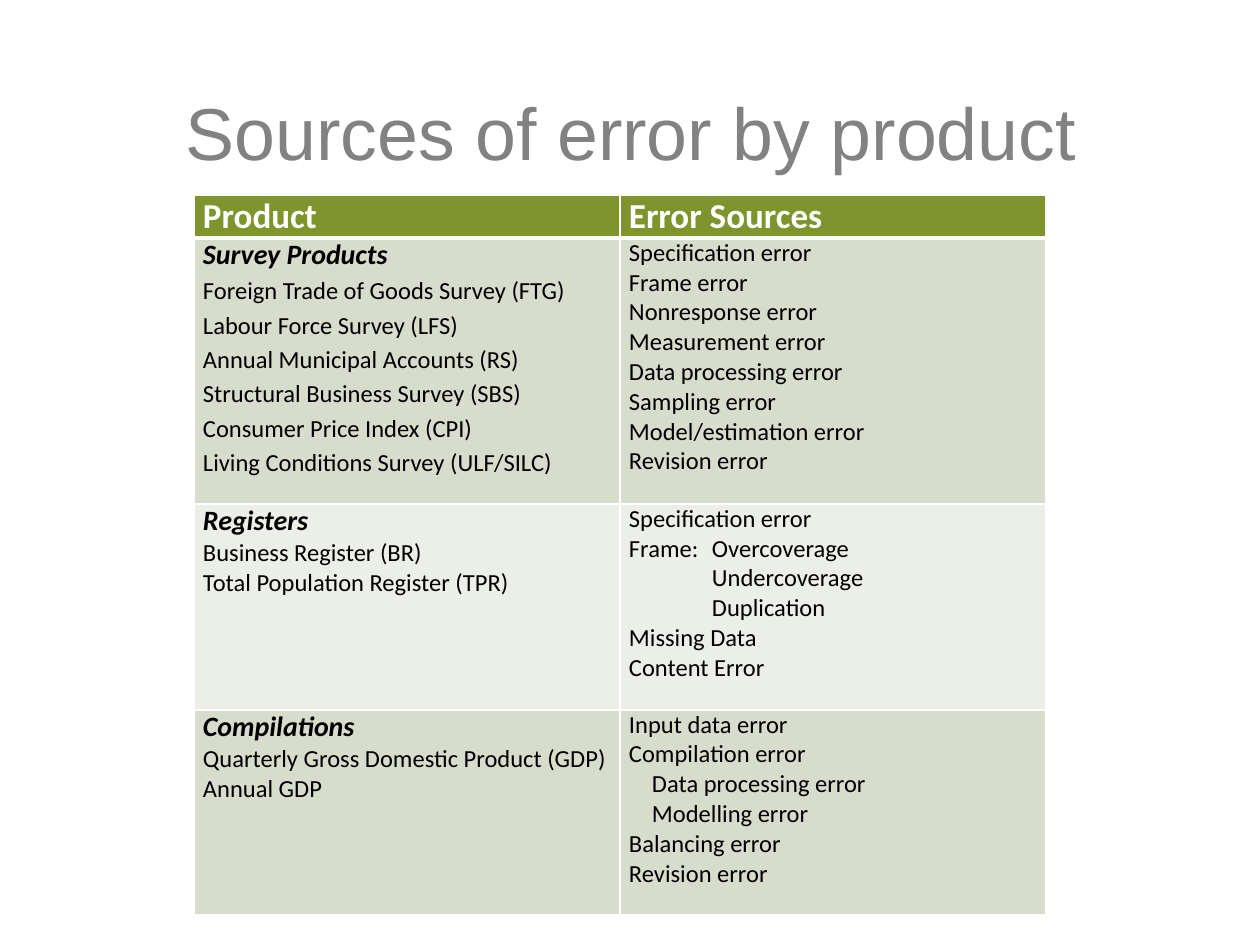
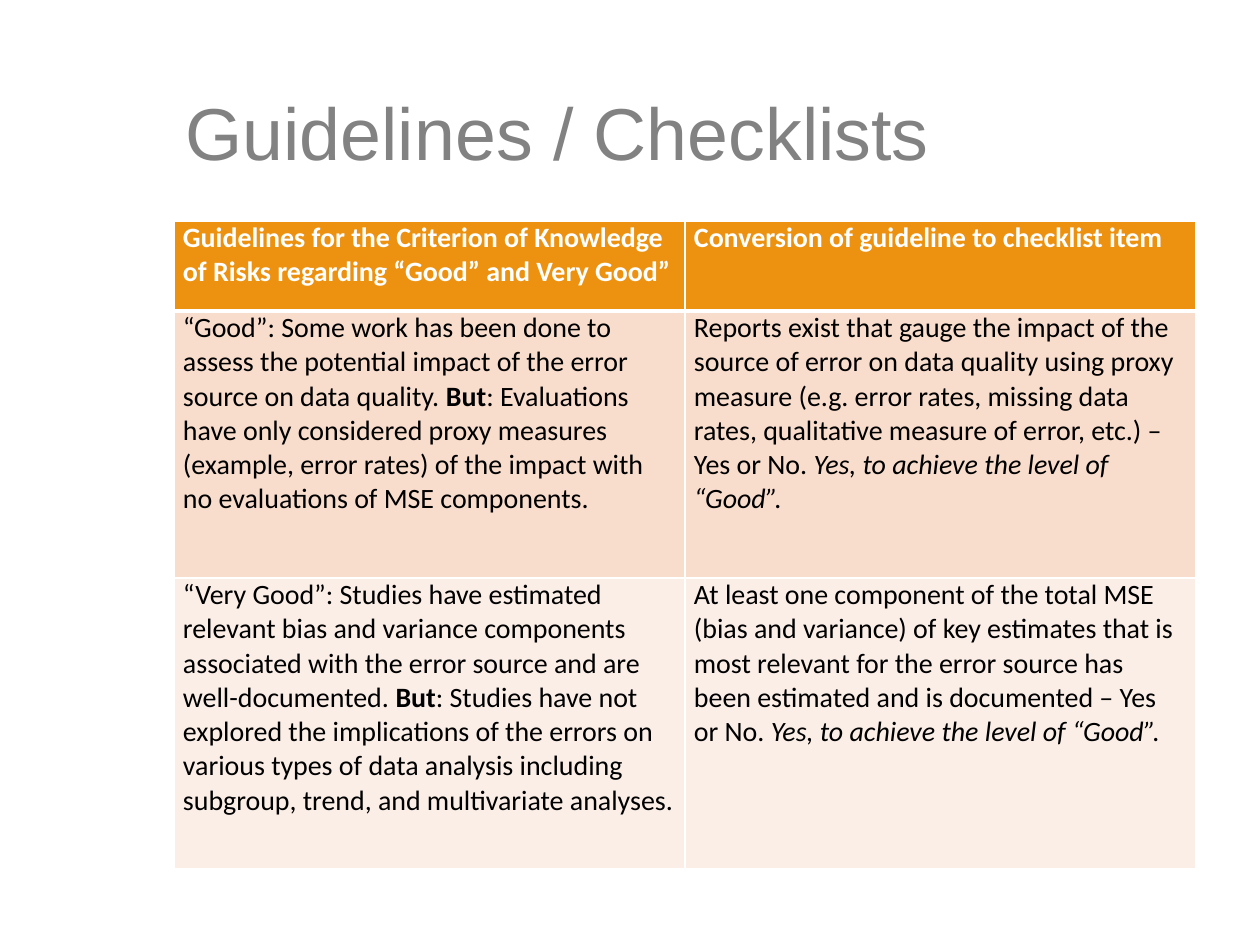
from dataclasses import dataclass

from lxml import etree
from pptx import Presentation
from pptx import util as u
from pptx.dml.color import RGBColor
from pptx.enum import text
from pptx.oxml import ns

PX_PER_INCH = 126
SLIDE_WIDTH, SLIDE_HEIGHT = 1260, 945
TITLE_BOX = (173, 52, 1024, 158)
CELL_MARGIN = 9
COVERAGE_INDENT = 83
COMPILATION_INDENT = 23

TITLE_FONT = "Arial"
TABLE_FONT = "Calibri"

WHITE = RGBColor(0xFF, 0xFF, 0xFF)
BLACK = RGBColor(0x00, 0x00, 0x00)
TITLE_GREY = RGBColor(0x82, 0x82, 0x82)
GREEN = RGBColor(0x7F, 0x94, 0x2C)
GREEN_BAND = RGBColor(0xD8, 0xDC, 0xCD)
GREEN_PALE = RGBColor(0xEC, 0xEE, 0xE8)
ORANGE = RGBColor(0xEC, 0x92, 0x10)
ORANGE_BAND = RGBColor(0xF8, 0xDC, 0xCC)
ORANGE_PALE = RGBColor(0xFB, 0xEE, 0xE7)


@dataclass(frozen=True)
class Span:
    text: str
    bold: bool = False
    italic: bool = False


@dataclass(frozen=True)
class Line:
    spans: tuple[Span, ...]
    size: int
    indent: int = 0
    tab: int = 0
    spacing: float = 1.0


Cell = list[Line]


@dataclass(frozen=True)
class TableSlide:
    title: str
    left: int
    top: int
    column_width: int
    row_heights: tuple[int, ...]
    header_fill: RGBColor
    band_fills: tuple[RGBColor, RGBColor]
    rows: list[list[Cell]]


def px(length: int) -> u.Emu:
    return u.Emu(round(length * u.Inches(1) / PX_PER_INCH))


def header(labels: list[str], size: int) -> list[Cell]:
    return [[Line((Span(label, bold=True),), size)] for label in labels]


def item(label: str, indent: int = 0, tab: int = 0, spacing: float = 1.0) -> Line:
    return Line((Span(label),), 14, indent, tab, spacing)


def product_group(name: str, products: list[str], spacing: float = 1.0) -> Cell:
    heading = Line((Span(name, bold=True, italic=True),), 16)
    return [heading] + [item(product, spacing=spacing) for product in products]


def prose(*spans: Span) -> Cell:
    return [Line(spans, 16)]


ACHIEVED = Span("Yes, to achieve the level of “Good”.", italic=True)
BUT = Span("But", bold=True)

ERROR_SOURCES = TableSlide(
    title="Sources of error by product",
    left=194,
    top=195,
    column_width=426,
    row_heights=(42, 266, 206, 205),
    header_fill=GREEN,
    band_fills=(GREEN_BAND, GREEN_PALE),
    rows=[
        header(["Product", "Error Sources"], 20),
        [
            product_group("Survey Products", [
                "Foreign Trade of Goods Survey (FTG)",
                "Labour Force Survey (LFS)",
                "Annual Municipal Accounts (RS)",
                "Structural Business Survey (SBS)",
                "Consumer Price Index (CPI)",
                "Living Conditions Survey (ULF/SILC)",
            ], spacing=1.15),
            [item(label) for label in (
                "Specification error",
                "Frame error",
                "Nonresponse error",
                "Measurement error",
                "Data processing error",
                "Sampling error",
                "Model/estimation error",
                "Revision error",
            )],
        ],
        [
            product_group("Registers", [
                "Business Register (BR)",
                "Total Population Register (TPR)",
            ]),
            [
                item("Specification error"),
                item("Frame:\tOvercoverage", tab=COVERAGE_INDENT),
                item("Undercoverage", COVERAGE_INDENT),
                item("Duplication", COVERAGE_INDENT),
                item("Missing Data"),
                item("Content Error"),
            ],
        ],
        [
            product_group("Compilations", [
                "Quarterly Gross Domestic Product (GDP)",
                "Annual GDP",
            ]),
            [
                item("Input data error"),
                item("Compilation error"),
                item("Data processing error", COMPILATION_INDENT),
                item("Modelling error", COMPILATION_INDENT),
                item("Balancing error"),
                item("Revision error"),
            ],
        ],
    ],
)

GUIDELINES = TableSlide(
    title="Guidelines / Checklists",
    left=174,
    top=221,
    column_width=511,
    row_heights=(90, 267, 291),
    header_fill=ORANGE,
    band_fills=(ORANGE_BAND, ORANGE_PALE),
    rows=[
        header([
            "Guidelines for the Criterion of Knowledge of Risks regarding “Good” and Very Good”",
            "Conversion of guideline to checklist item",
        ], 16),
        [
            prose(
                Span("“Good”: Some work has been done to assess the potential impact of "
                     "the error source on data quality. "),
                BUT,
                Span(": Evaluations have only considered proxy measures (example, error "
                     "rates) of the impact with no evaluations of MSE components."),
            ),
            prose(
                Span("Reports exist that gauge the impact of the source of error on data "
                     "quality using proxy measure (e.g. error rates, missing data rates, "
                     "qualitative measure of error, etc.) – Yes or No. "),
                ACHIEVED,
            ),
        ],
        [
            prose(
                Span("“Very Good”: Studies have estimated relevant bias and variance "
                     "components associated with the error source and are well-documented. "),
                BUT,
                Span(": Studies have not explored the implications of the errors on various "
                     "types of data analysis including subgroup, trend, and multivariate "
                     "analyses."),
            ),
            prose(
                Span("At least one component of the total MSE (bias and variance) of key "
                     "estimates that is most relevant for the error source has been "
                     "estimated and is documented – Yes or No. "),
                ACHIEVED,
            ),
        ],
    ],
)


def set_borders(cell, top: int, bottom: int) -> None:
    properties = cell._tc.get_or_add_tcPr()
    for side, points in (("L", 1), ("R", 1), ("T", top), ("B", bottom)):
        border = etree.SubElement(properties, ns.qn(f"a:ln{side}"), w=str(u.Pt(points)))
        fill = etree.SubElement(border, ns.qn("a:solidFill"))
        etree.SubElement(fill, ns.qn("a:srgbClr"), val=str(WHITE))


def write_line(paragraph, line: Line, color: RGBColor) -> None:
    properties = paragraph._p.get_or_add_pPr()
    if line.indent:
        properties.set("marL", str(px(line.indent)))
    if line.tab:
        tabs = etree.SubElement(properties, ns.qn("a:tabLst"))
        etree.SubElement(tabs, ns.qn("a:tab"), pos=str(px(line.tab)), algn="l")
    paragraph.line_spacing = line.spacing
    for span in line.spans:
        run = paragraph.add_run()
        run.text = span.text
        run.font.name = TABLE_FONT
        run.font.size = u.Pt(line.size)
        run.font.bold = span.bold
        run.font.italic = span.italic
        run.font.color.rgb = color


def fill_cell(cell, lines: Cell, fill: RGBColor, color: RGBColor) -> None:
    cell.margin_left = cell.margin_right = px(CELL_MARGIN)
    cell.margin_top = cell.margin_bottom = 0
    cell.fill.solid()
    cell.fill.fore_color.rgb = fill
    text_frame = cell.text_frame
    for index, line in enumerate(lines):
        paragraph = text_frame.add_paragraph() if index else text_frame.paragraphs[0]
        write_line(paragraph, line, color)


def set_title(slide, title: str) -> None:
    shape = slide.shapes.title
    shape.left, shape.top, shape.width, shape.height = map(px, TITLE_BOX)
    text_frame = shape.text_frame
    text_frame.text = title
    text_frame.auto_size = text.MSO_AUTO_SIZE.NONE
    text_frame.vertical_anchor = text.MSO_ANCHOR.MIDDLE
    paragraph = text_frame.paragraphs[0]
    paragraph.alignment = text.PP_ALIGN.LEFT
    font = paragraph.runs[0].font
    font.name = TITLE_FONT
    font.size = u.Pt(42)
    font.color.rgb = TITLE_GREY


def add_table_slide(presentation, content: TableSlide) -> None:
    slide = presentation.slides.add_slide(presentation.slide_layouts.get_by_name("Title Only"))
    set_title(slide, content.title)
    column_count = len(content.rows[0])
    table = slide.shapes.add_table(
        len(content.rows), column_count, px(content.left), px(content.top),
        px(content.column_width * column_count), px(sum(content.row_heights)),
    ).table
    for column in table.columns:
        column.width = px(content.column_width)
    for row_index, (row, height) in enumerate(zip(content.rows, content.row_heights)):
        table.rows[row_index].height = px(height)
        is_header = row_index == 0
        fill = content.header_fill if is_header else content.band_fills[(row_index - 1) % 2]
        for column_index, lines in enumerate(row):
            cell = table.cell(row_index, column_index)
            set_borders(cell, top=3 if row_index == 1 else 1, bottom=3 if is_header else 1)
            fill_cell(cell, lines, fill, WHITE if is_header else BLACK)


def main() -> None:
    presentation = Presentation()
    presentation.slide_width = px(SLIDE_WIDTH)
    presentation.slide_height = px(SLIDE_HEIGHT)
    for content in (ERROR_SOURCES, GUIDELINES):
        add_table_slide(presentation, content)
    presentation.save("out.pptx")


if __name__ == "__main__":
    main()
